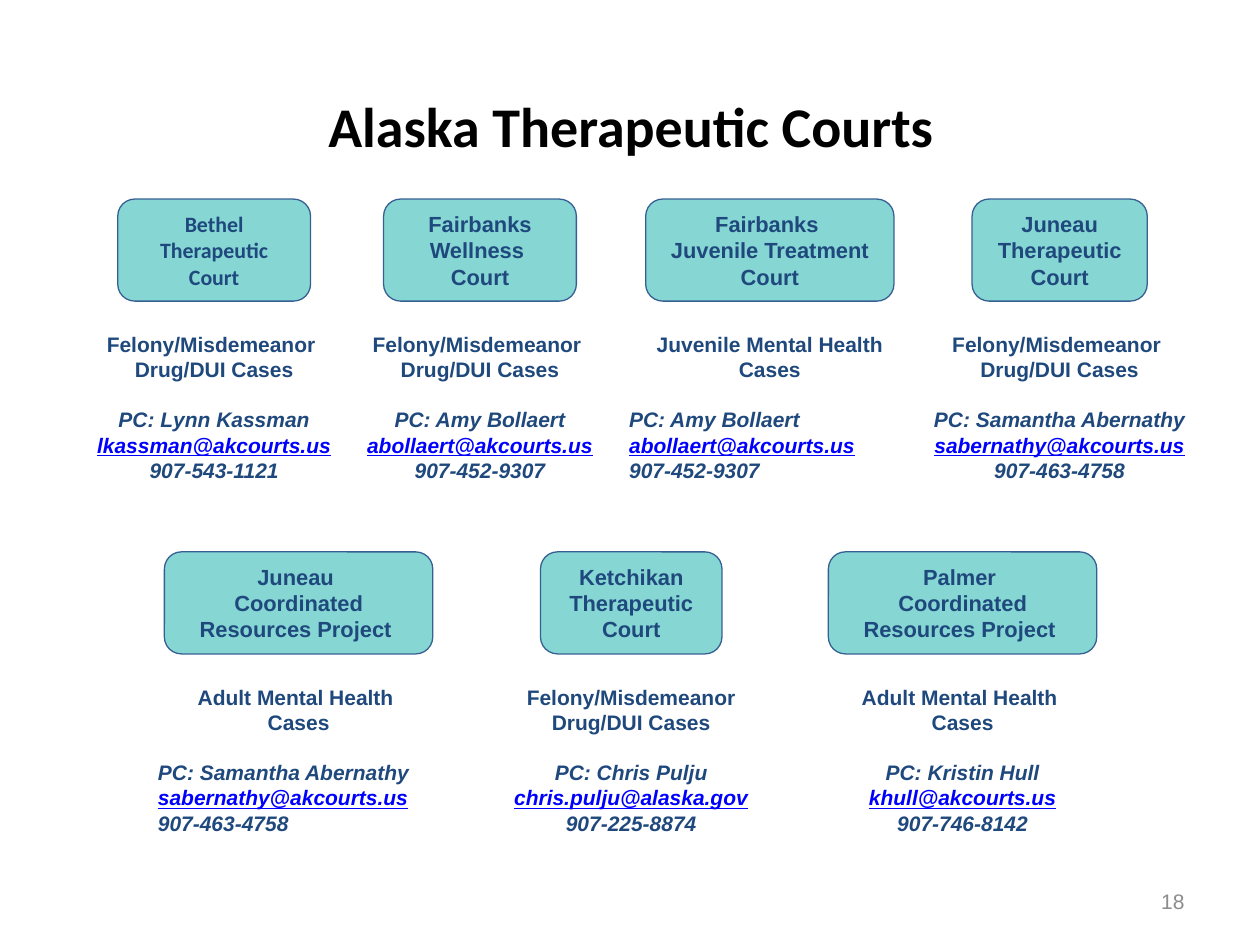
from pptx import Presentation
from pptx.dml.color import RGBColor
from pptx.enum.shapes import MSO_SHAPE as Shape
from pptx.enum.text import MSO_ANCHOR as Anchor, PP_ALIGN as Align
from pptx.util import Inches, Pt

COLORS = {
    "box": "86D6D4", "border": "376092", "text": "1F497D",
    "email": "0000FF", "title": "000000", "number": "8C8C8C",
}
WIDTH, HEIGHT = 10, 7.5
ROW_TOPS = [1.58, 4.38]
BOX_HEIGHT, DETAIL_OFFSET = 0.81, 1
DETAIL_WIDTH, DETAIL_HEIGHT = 2.43, 1.31
LINE_RATIO = 1.2

DRUG_CASES = ["Felony/Misdemeanor ", "Drug/DUI Cases"]
ADULT_CASES = ["Adult Mental Health ", "Cases"]
PROJECT = "Coordinated Resources Project "

COURTS = [
    [
        dict(center=1.7, width=1.53, font="Calibri", name=["Bethel Therapeutic Court"], cases=DRUG_CASES,
             contact=["PC: Lynn Kassman", "lkassman@akcourts.us", "907-543-1121"]),
        dict(center=3.81, width=1.53, name=["Fairbanks Wellness ", "Court"], cases=DRUG_CASES,
             contact=["PC: Amy Bollaert", "abollaert@akcourts.us", "907-452-9307"]),
        dict(center=6.11, width=1.97, name=["Fairbanks ", "Juvenile Treatment Court"],
             cases=["Juvenile Mental Health Cases"], align=Align.LEFT,
             contact=["PC: Amy Bollaert", "abollaert@akcourts.us", "907-452-9307"]),
        dict(center=8.41, width=1.39, name=["Juneau Therapeutic Court"], cases=DRUG_CASES,
             contact=["PC: Samantha Abernathy", "sabernathy@akcourts.us", "907-463-4758"]),
    ],
    [
        dict(center=2.37, width=2.13, name=["Juneau ", PROJECT], cases=ADULT_CASES, align=Align.LEFT,
             contact=["PC: Samantha Abernathy", "sabernathy@akcourts.us", "907-463-4758"]),
        dict(center=5.01, width=1.44, name=["Ketchikan Therapeutic Court"],
             cases=["Felony/Misdemeanor Drug/DUI Cases"],
             contact=["PC: Chris Pulju", "chris.pulju@alaska.gov", "907-225-8874"]),
        dict(center=7.64, width=2.13, name=["Palmer ", PROJECT], cases=ADULT_CASES,
             contact=["PC: Kristin Hull", "khull@akcourts.us", "907-746-8142"]),
    ],
]


def color(name):
    return RGBColor.from_string(COLORS[name])


def write(shape, text, size=12, font="Arial", ink="text", bold=True, italic=False,
          underline=False, align=Align.CENTER, before=0):
    frame = shape.text_frame
    paragraph = frame.paragraphs[0]
    if paragraph.runs:
        paragraph = frame.add_paragraph()
    paragraph.alignment = align
    paragraph.line_spacing = Pt(size * LINE_RATIO)
    paragraph.space_before = Pt(before)
    run = paragraph.add_run()
    run.text = text
    run.font.size = Pt(size)
    run.font.name = font
    run.font.bold = bold
    run.font.italic = italic
    run.font.underline = underline
    run.font.color.rgb = color(ink)


def add_text_box(slide, left, top, width, height, anchor=Anchor.MIDDLE):
    shape = slide.shapes.add_textbox(*map(Inches, (left, top, width, height)))
    shape.text_frame.word_wrap = True
    shape.text_frame.vertical_anchor = anchor
    return shape


def add_name_box(slide, court, top):
    left = court["center"] - court["width"] / 2
    shape = slide.shapes.add_shape(
        Shape.ROUNDED_RECTANGLE, *map(Inches, (left, top, court["width"], BOX_HEIGHT)))
    shape.shadow.inherit = False
    shape.fill.solid()
    shape.fill.fore_color.rgb = color("box")
    shape.line.color.rgb = color("border")
    shape.line.width = Pt(0.75)
    shape.text_frame.word_wrap = True
    shape.text_frame.vertical_anchor = Anchor.MIDDLE
    for line in court["name"]:
        write(shape, line, size=12.5, font=court.get("font", "Arial"))


def add_details(slide, court, top):
    shape = add_text_box(slide, court["center"] - DETAIL_WIDTH / 2, top,
                         DETAIL_WIDTH, DETAIL_HEIGHT, anchor=Anchor.TOP)
    for line in court["cases"]:
        write(shape, line)
    coordinator, email, phone = court["contact"]
    style = dict(italic=True, align=court.get("align", Align.CENTER))
    write(shape, coordinator, before=12 * LINE_RATIO, **style)
    write(shape, email, ink="email", underline=True, **style)
    write(shape, phone, **style)


def main():
    presentation = Presentation()
    presentation.slide_width = Inches(WIDTH)
    presentation.slide_height = Inches(HEIGHT)
    slide = presentation.slides.add_slide(presentation.slide_layouts[6])

    title = add_text_box(slide, 1.01, 0.66, 8, 0.66)
    write(title, "Alaska Therapeutic Courts", size=32, font="Calibri", ink="title")

    for top, courts in zip(ROW_TOPS, COURTS):
        for court in courts:
            add_name_box(slide, court, top)
            add_details(slide, court, top + DETAIL_OFFSET)

    number = add_text_box(slide, 7.17, 6.95, 2.33, 0.4)
    write(number, "18", ink="number", bold=False, align=Align.RIGHT)
    presentation.save("out.pptx")


if __name__ == "__main__":
    main()
